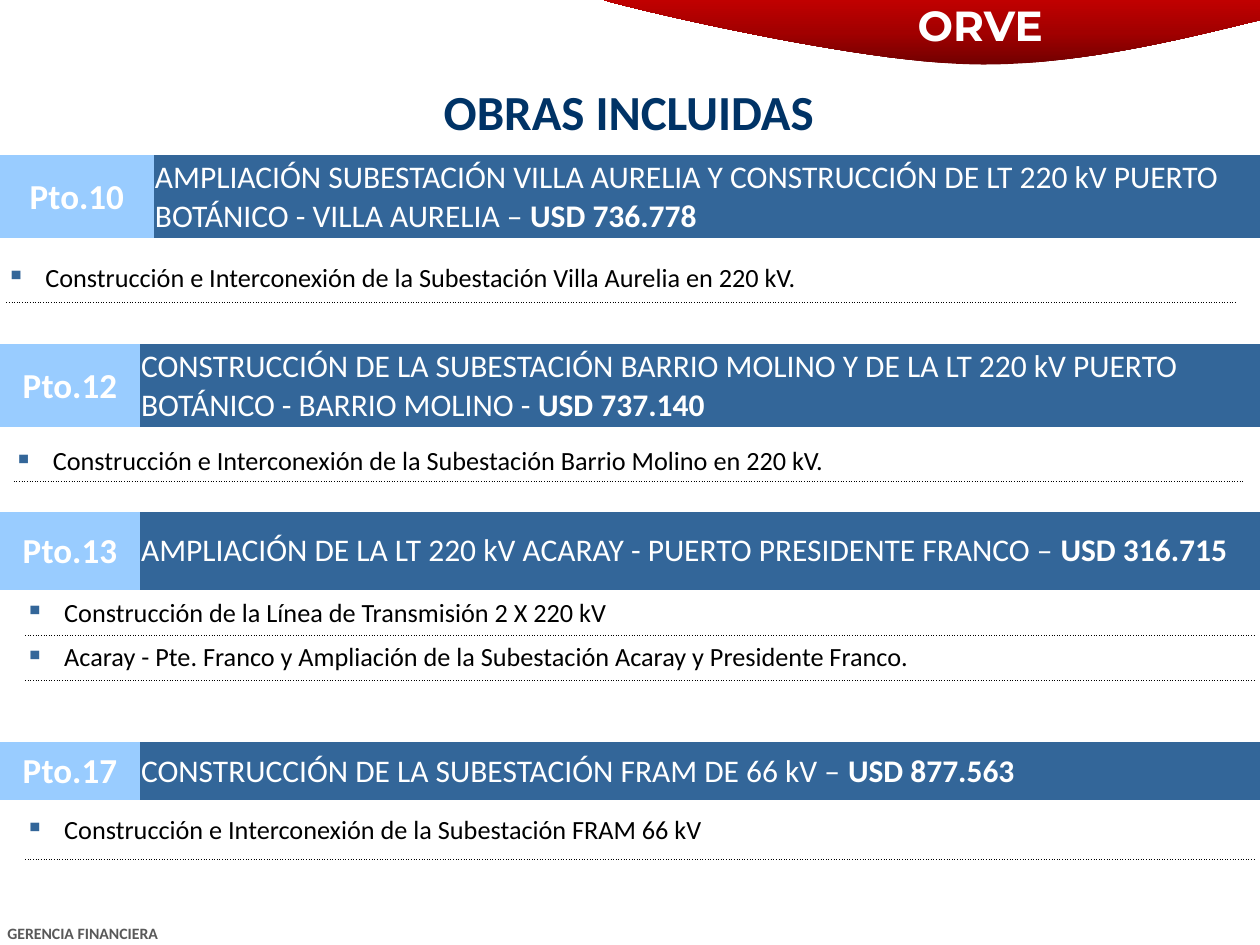
from copy import deepcopy
from dataclasses import dataclass

from lxml import etree
from pptx import Presentation
from pptx.dml.color import RGBColor
from pptx.enum.text import MSO_ANCHOR, PP_ALIGN
from pptx.oxml.ns import qn
from pptx.util import Inches, Pt

CENTER = PP_ALIGN.CENTER
LEFT = PP_ALIGN.LEFT
MIDDLE = MSO_ANCHOR.MIDDLE
TOP = MSO_ANCHOR.TOP
NO_STYLE = "{2D5ABB26-0587-4C30-8999-92F81FD0307C}"
WHITE, BLACK, GREY = "FFFFFF", "000000", "595959"
NAVY, BLUE, LIGHT_BLUE = "003366", "336699", "99CCFF"
PAGE_WIDTH = 10
LIST_WIDTH = 9.76
INDENT = 0.31
CURVE_STEPS = 24
BANNER_START = (4.79, 0)
BANNER_CURVES = [
    [(5.09, 0.09), (6.82, 0.49), (7.69, 0.51)],
    [(8.56, 0.54), (9.61, 0.25), (10, 0.16)],
]
BANNER_STOPS = [("720000", 0), ("A20000", 0.5), ("C00000", 1)]


@dataclass
class Work:
    point: str
    name: str
    amount: str
    top: float
    height: float
    label_width: float
    items: list[str]
    list_left: float
    list_top: float
    row_height: float


WORKS = [
    Work("Pto.10",
         "AMPLIACIÓN SUBESTACIÓN VILLA AURELIA Y CONSTRUCCIÓN DE LT 220 kV PUERTO BOTÁNICO - VILLA AURELIA – ",
         "USD 736.778", 1.23, 0.66, 1.22,
         ["Construcción e Interconexión de la Subestación Villa Aurelia en 220 kV."],
         0.05, 2.02, 0.38),
    Work("Pto.12",
         "CONSTRUCCIÓN DE LA SUBESTACIÓN BARRIO MOLINO Y DE LA LT 220 kV PUERTO BOTÁNICO - BARRIO MOLINO - ",
         "USD 737.140", 2.73, 0.66, 1.11,
         ["Construcción e Interconexión de la Subestación Barrio Molino en 220 kV."],
         0.11, 3.51, 0.31),
    Work("Pto.13",
         "AMPLIACIÓN DE LA LT 220 kV ACARAY - PUERTO PRESIDENTE FRANCO – ",
         "USD 316.715", 4.06, 0.62, 1.11,
         ["Construcción de la Línea de Transmisión 2 X 220 kV",
          "Acaray - Pte. Franco y Ampliación de la Subestación Acaray y Presidente Franco."],
         0.2, 4.69, 0.355),
    Work("Pto.17",
         "CONSTRUCCIÓN DE LA SUBESTACIÓN FRAM DE 66 kV – ",
         "USD 877.563", 5.89, 0.46, 1.11,
         ["Construcción e Interconexión de la Subestación FRAM 66 kV"],
         0.2, 6.36, 0.46),
]


def color(value: str) -> RGBColor:
    return RGBColor.from_string(value)


def format_text(para, size: float, value: str, bold=None, align=LEFT, name="Calibri") -> None:
    para.alignment = align
    font = para.font
    font.name, font.size, font.bold = name, Pt(size), bold
    font.color.rgb = color(value)


def curve_points(start: tuple, curves: list) -> list[tuple]:
    points = []
    for first, second, end in curves:
        for step in range(1, CURVE_STEPS + 1):
            t = step / CURVE_STEPS
            points.append(tuple(
                Inches((1 - t) ** 3 * a + 3 * (1 - t) ** 2 * t * b + 3 * (1 - t) * t ** 2 * c + t ** 3 * d)
                for a, b, c, d in zip(start, first, second, end)))
        start = end
    return points


def add_banner(page) -> None:
    builder = page.shapes.build_freeform(*(Inches(value) for value in BANNER_START))
    points = curve_points(BANNER_START, BANNER_CURVES)
    builder.add_line_segments(points + [(Inches(PAGE_WIDTH), 0)])
    banner = builder.convert_to_shape()
    banner.shadow.inherit = False
    banner.line.fill.background()
    banner.fill.gradient()
    banner.fill.gradient_angle = 90
    stop_list = banner.fill._fill._gradFill.gsLst
    stop_list.insert(1, deepcopy(stop_list[0]))
    for stop, (value, position) in zip(banner.fill.gradient_stops, BANNER_STOPS):
        stop.color.rgb = color(value)
        stop.position = position


def add_label(page, text: str, bounds: tuple, size: float, value: str, align, name="Calibri") -> None:
    box = page.shapes.add_textbox(*(Inches(length) for length in bounds))
    box.text_frame.word_wrap = True
    para = box.text_frame.paragraphs[0]
    para.text = text
    format_text(para, size, value, True, align, name)


def add_table(page, left: float, top: float, widths: list[float], heights: list[float]):
    table = page.shapes.add_table(
        len(heights), len(widths), Inches(left), Inches(top),
        Inches(sum(widths)), Inches(sum(heights))).table
    table.first_row = table.horz_banding = False
    table._tbl.tblPr.find(qn("a:tableStyleId")).text = NO_STYLE
    for column, width in zip(table.columns, widths):
        column.width = Inches(width)
    for row, height in zip(table.rows, heights):
        row.height = Inches(height)
    return table


def format_cell(cell, fill: str, inset: float) -> None:
    cell.fill.solid()
    cell.fill.fore_color.rgb = color(fill)
    cell.vertical_anchor = MIDDLE
    cell.margin_left = cell.margin_right = cell.margin_top = Inches(inset)
    cell.margin_bottom = 0


def add_bottom_border(cell) -> None:
    line = etree.Element(qn("a:lnB"), w=str(Pt(0.25)))
    fill = etree.SubElement(line, qn("a:solidFill"))
    etree.SubElement(fill, qn("a:srgbClr"), val=BLACK)
    etree.SubElement(line, qn("a:prstDash"), val="sysDot")
    cell._tc.get_or_add_tcPr().insert(0, line)


def add_bullet(para) -> None:
    properties = para._p.get_or_add_pPr()
    properties.set("marL", str(Inches(INDENT)))
    properties.set("indent", str(-Inches(INDENT)))
    bullet_color = etree.SubElement(properties, qn("a:buClr"))
    etree.SubElement(bullet_color, qn("a:srgbClr"), val=BLUE)
    etree.SubElement(properties, qn("a:buChar"), char="▪")


def add_work(page, work: Work) -> None:
    widths = [work.label_width, PAGE_WIDTH - work.label_width]
    heading = add_table(page, 0, work.top, widths, [work.height])
    point_cell, name_cell = heading.cell(0, 0), heading.cell(0, 1)
    format_cell(point_cell, LIGHT_BLUE, 0.01)
    format_cell(name_cell, BLUE, 0.01)
    point_cell.text = work.point
    format_text(point_cell.text_frame.paragraphs[0], 20, WHITE, True, CENTER)
    para = name_cell.text_frame.paragraphs[0]
    for text, bold in ((work.name, False), (work.amount, True)):
        span = para.add_run()
        span.text, span.font.bold = text, bold
    format_text(para, 18, WHITE)

    details = add_table(page, work.list_left, work.list_top, [LIST_WIDTH],
                        [work.row_height] * len(work.items))
    for row, item in enumerate(work.items):
        cell = details.cell(row, 0)
        format_cell(cell, WHITE, 0)
        add_bottom_border(cell)
        cell.text = item
        para = cell.text_frame.paragraphs[0]
        add_bullet(para)
        format_text(para, 15, BLACK)


def main() -> None:
    deck = Presentation()
    deck.slide_width, deck.slide_height = Inches(PAGE_WIDTH), Inches(7.5)
    page = deck.slides.add_slide(deck.slide_layouts[5])
    add_banner(page)
    add_label(page, "ORVE", (7.13, -0.05, 1.3, 0.5), 24, WHITE, CENTER, "Montserrat")
    add_label(page, "GERENCIA FINANCIERA", (-0.04, 7.28, 3.46, 0.25), 9, GREY, LEFT)
    for work in WORKS:
        add_work(page, work)
    title = page.shapes.title
    title.left, title.top = Inches(0), Inches(0.6)
    title.width, title.height = Inches(9.98), Inches(0.55)
    title.text_frame.vertical_anchor = TOP
    title.text_frame.text = "OBRAS INCLUIDAS"
    format_text(title.text_frame.paragraphs[0], 28, NAVY, True, CENTER)
    deck.save("out.pptx")


if __name__ == "__main__":
    main()
